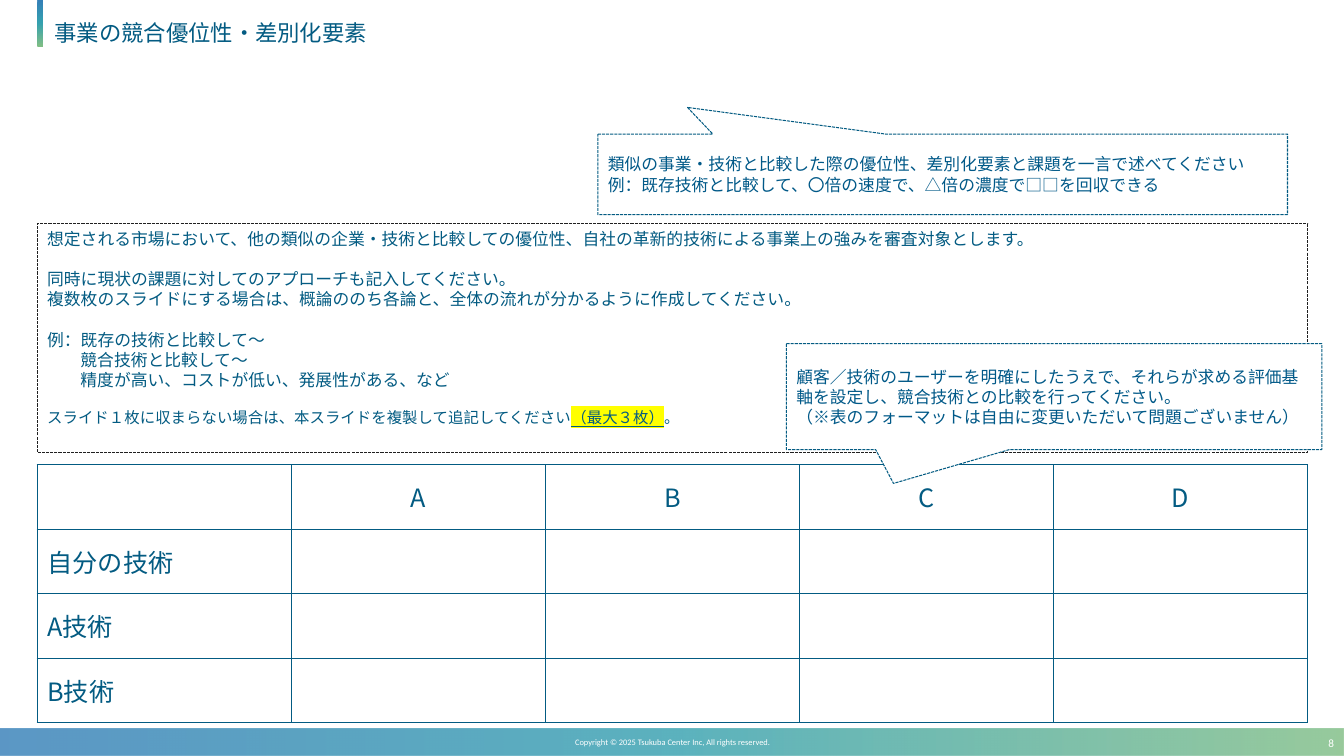
from dataclasses import dataclass

from lxml import etree
from pptx import Presentation
from pptx.dml.color import RGBColor
from pptx.enum import dml, shapes, text
from pptx.oxml import ns
from pptx.util import Inches, Pt

COLORS = {
    "navy": "035B82", "callout": "005988", "black": "202020", "white": "FFFFFF",
    "blue": "347EB8", "teal": "34A0AF", "green": "7FBE85", "marker": "FFFF00",
}
LATIN, JAPANESE = "Calibri", "Noto Sans CJK JP"
LEFT, CONTENT_WIDTH = 0.37, 12.6


@dataclass
class Line:
    text: str
    size: float = 0
    before: float = 0
    indent: float = 0
    marked: str = ""
    ending: str = ""


def rgb(name):
    return RGBColor.from_string(COLORS[name])


def inches(box):
    return [Inches(length) for length in box]


def child(parent, tag, **attributes):
    return etree.SubElement(parent, ns.qn(tag), attributes)


def add_run(paragraph, words, size, color, font, marked=False):
    run = paragraph.add_run()
    run.text = words
    run.font.size = Pt(size)
    run.font.name = font
    run.font.color.rgb = rgb(color)
    properties = run.font._element
    latin = properties.find(ns.qn("a:latin"))
    latin.addnext(etree.Element(ns.qn("a:ea"), typeface=JAPANESE))
    if marked:
        run.font.underline = True
        highlight = etree.Element(ns.qn("a:highlight"))
        child(highlight, "a:srgbClr", val=COLORS["marker"])
        latin.addprevious(highlight)


def write(frame, lines, size=12, color="navy", font=JAPANESE, align="LEFT",
          anchor="MIDDLE", insets=(0.1, 0.05, 0.1, 0.05), leading=None):
    frame.word_wrap = True
    frame.auto_size = text.MSO_AUTO_SIZE.NONE
    frame.vertical_anchor = text.MSO_ANCHOR[anchor]
    (frame.margin_left, frame.margin_top,
     frame.margin_right, frame.margin_bottom) = inches(insets)
    for index, line in enumerate(lines):
        paragraph = frame.add_paragraph() if index else frame.paragraphs[0]
        points = line.size or size
        paragraph.alignment = text.PP_ALIGN[align]
        paragraph.space_before = Pt(line.before)
        paragraph.line_spacing = leading or Pt(points * 1.2)
        if line.indent:
            paragraph._p.get_or_add_pPr().set("marL", str(Inches(line.indent)))
        for words, marked in ((line.text, False), (line.marked, True), (line.ending, False)):
            if words:
                add_run(paragraph, words, points, color, font, marked)


def add_box(slide, kind, box, line=None, fill=None):
    panel = slide.shapes.add_shape(shapes.MSO_SHAPE[kind], *inches(box))
    panel.shadow.inherit = False
    if fill:
        panel.fill.solid()
        panel.fill.fore_color.rgb = rgb(fill)
    else:
        panel.fill.background()
    if line:
        panel.line.color.rgb = rgb(line)
        panel.line.width = Pt(0.75)
        panel.line.dash_style = dml.MSO_LINE.SQUARE_DOT
        dash = panel.line._ln.find(ns.qn("a:prstDash"))
        dash.set("val", "sysDash")
    else:
        panel.line.fill.background()
    return panel


def add_gradient_bar(slide, box, angle, opacity=100):
    bar = add_box(slide, "RECTANGLE", box)
    gradient = etree.Element(ns.qn("a:gradFill"), rotWithShape="1")
    stops = child(gradient, "a:gsLst")
    for position, name in ((0, "blue"), (50, "teal"), (100, "green")):
        stop = child(stops, "a:gs", pos=str(position * 1000))
        shade = child(stop, "a:srgbClr", val=COLORS[name])
        if opacity < 100:
            child(shade, "a:alpha", val=str(opacity * 1000))
    child(gradient, "a:lin", ang=str(angle * 60000), scaled="0")
    properties = bar._element.spPr
    properties.replace(properties.find(ns.qn("a:noFill")), gradient)


def add_header(slide, box):
    left, top, width, height = box
    add_gradient_bar(slide, (left, top - 0.01, 0.06, height + 0.01), 90)
    title = slide.shapes.title
    title.left, title.top, title.width, title.height = inches(
        (left + 0.05, top, width - 0.05, height))
    write(title.text_frame, [Line("事業の競合優位性・差別化要素")], size=16, font=LATIN,
          anchor="BOTTOM", insets=(0.12, 0.05, 0.1, 0), leading=0.9)


def add_footer(slide, box):
    left, top, width, height = box
    add_gradient_bar(slide, box, 0, opacity=80)
    copyright_line = slide.shapes.add_textbox(
        *inches((left + 5.18, top + 0.03, 2.98, 0.2)))
    write(copyright_line.text_frame,
          [Line("Copyright © 2025 Tsukuba Center Inc, All rights reserved.")],
          size=6, color="white", font=LATIN, align="CENTER")
    page_number = slide.shapes.add_textbox(
        *inches((left + width - 1.12, top - 0.06, 1.12, 0.4)))
    write(page_number.text_frame, [Line("8")], size=8, color="white", font=LATIN,
          align="RIGHT")


def add_callout(slide, box, tip, lines):
    callout = add_box(slide, "RECTANGULAR_CALLOUT", box, line="navy", fill="white")
    callout.adjustments[0], callout.adjustments[1] = tip
    write(callout.text_frame, lines, color="callout")


def add_guidance(slide, box):
    guidance = add_box(slide, "RECTANGLE", box, line="black")
    write(guidance.text_frame, [
        Line("想定される市場において、他の類似の企業・技術と比較しての優位性、"
             "自社の革新的技術による事業上の強みを審査対象とします。"),
        Line("同時に現状の課題に対してのアプローチも記入してください。", before=14.4),
        Line("複数枚のスライドにする場合は、概論ののち各論と、"
             "全体の流れが分かるように作成してください。"),
        Line("例：既存の技術と比較して～", before=14.4),
        Line("競合技術と比較して～", indent=0.33),
        Line("精度が高い、コストが低い、発展性がある、など", indent=0.33),
        Line("スライド１枚に収まらない場合は、本スライドを複製して追記してください",
             size=11, before=13.2, marked="（最大３枚）", ending="。"),
    ], anchor="TOP")


def draw_borders(cell):
    properties = cell._tc.get_or_add_tcPr()
    for index, side in enumerate(("a:lnL", "a:lnR", "a:lnT", "a:lnB")):
        border = etree.Element(ns.qn(side), w=str(Pt(1)))
        fill = child(border, "a:solidFill")
        child(fill, "a:srgbClr", val=COLORS["navy"])
        properties.insert(index, border)


def add_comparison(slide, box):
    criteria = ["", "A", "B", "C", "D"]
    technologies = ["", "自分の技術", "A技術", "B技術"]
    comparison = slide.shapes.add_table(
        len(technologies), len(criteria), *inches(box)).table
    comparison.first_row = comparison.horz_banding = False
    for row, technology in enumerate(technologies):
        for column, criterion in enumerate(criteria):
            cell = comparison.cell(row, column)
            cell.fill.background()
            draw_borders(cell)
            cell.vertical_anchor = text.MSO_ANCHOR.MIDDLE
            label = technology if column == 0 else criterion if row == 0 else ""
            if label:
                paragraph = cell.text_frame.paragraphs[0]
                paragraph.alignment = text.PP_ALIGN.CENTER if column else text.PP_ALIGN.LEFT
                add_run(paragraph, label, 18, "navy", JAPANESE)


def main():
    deck = Presentation()
    deck.slide_width, deck.slide_height = Inches(13.33), Inches(7.5)
    slide = deck.slides.add_slide(deck.slide_layouts[5])
    add_header(slide, (LEFT, 0, CONTENT_WIDTH, 0.46))
    add_footer(slide, (0, 7.23, 13.33, 0.27))
    add_callout(slide, (5.93, 1.33, 6.84, 0.8), (-0.37, -0.83), [
        Line("類似の事業・技術と比較した際の優位性、差別化要素と課題を一言で述べてください"),
        Line("例：既存技術と比較して、〇倍の速度で、△倍の濃度で□□を回収できる"),
    ])
    add_guidance(slide, (LEFT, 2.22, CONTENT_WIDTH, 2.27))
    add_comparison(slide, (LEFT, 4.61, CONTENT_WIDTH, 2.56))
    add_callout(slide, (7.8, 3.41, 5.31, 1.05), (-0.3, 0.82), [
        Line("顧客／技術のユーザーを明確にしたうえで、それらが求める評価基軸を設定し、"
             "競合技術との比較を行ってください。"),
        Line("（※表のフォーマットは自由に変更いただいて問題ございません）"),
    ])
    deck.save("out.pptx")


if __name__ == "__main__":
    main()
